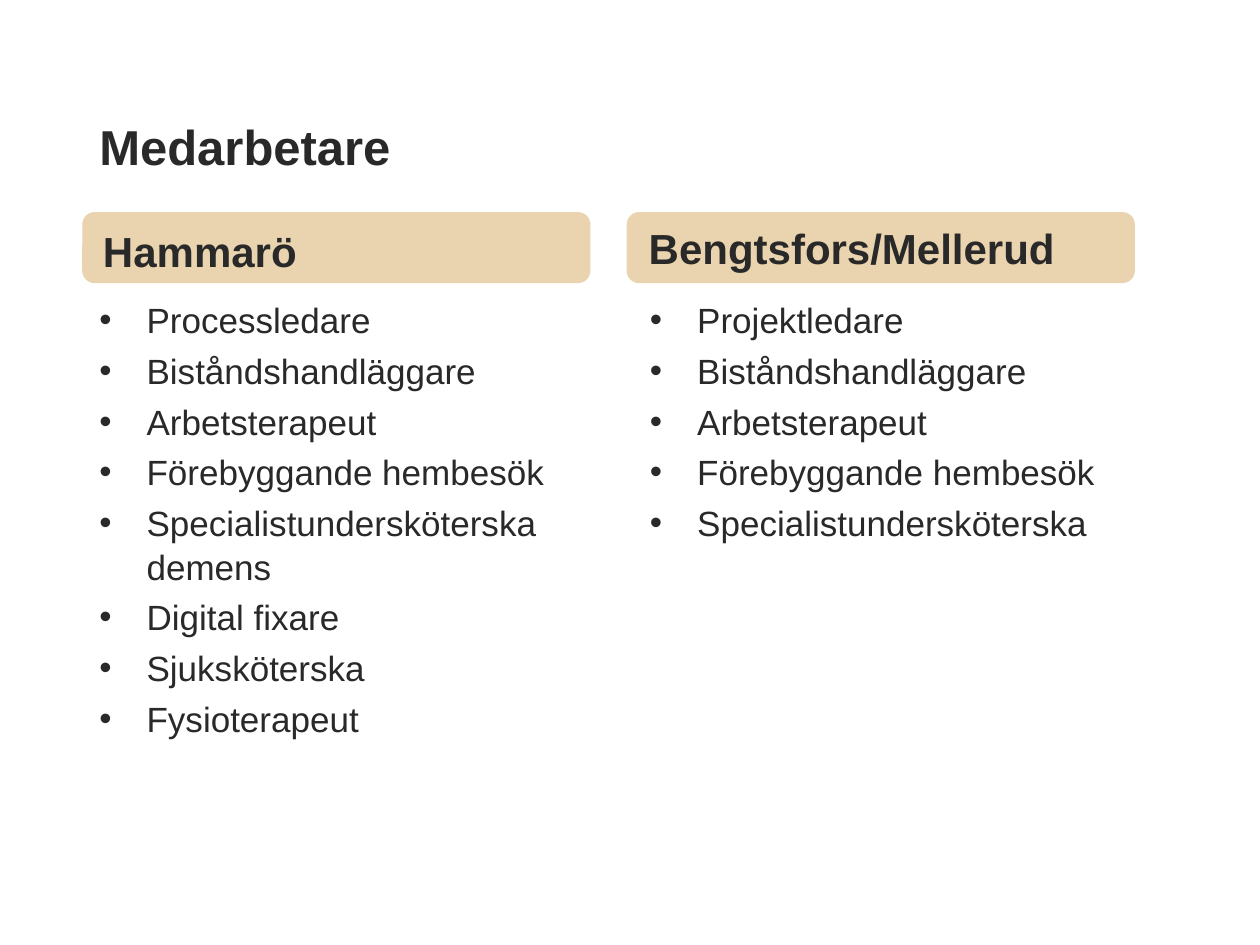
from dataclasses import dataclass

from lxml.etree import SubElement
from pptx import Presentation
from pptx.dml.color import RGBColor
from pptx.enum.shapes import MSO_SHAPE as Shp
from pptx.enum.text import MSO_ANCHOR as Anchor
from pptx.oxml.ns import qn
from pptx.slide import Slide
from pptx.util import Pt

COLORS = {"text": "292929", "band": "EAD4AF"}
FONT = "Arial"
INDENT = 27


@dataclass
class Column:
    heading: str
    roles: list[str]
    band_x: float
    heading_x: float
    heading_y: float
    list_x: float
    width: float


COLUMNS = [
    Column("Hammarö",
           ["Processledare", "Biståndshandläggare", "Arbetsterapeut",
            "Förebyggande hembesök", "Specialistundersköterska demens",
            "Digital fixare", "Sjuksköterska", "Fysioterapeut"],
           47.5, 51.8, 96.5, 49.7, 304.6),
    Column("Bengtsfors/Mellerud",
           ["Projektledare", "Biståndshandläggare", "Arbetsterapeut",
            "Förebyggande hembesök", "Specialistundersköterska"],
           358.6, 363.6, 95, 364.3, 306),
]


def add_text(s: Slide, text: str, *, x: float, y: float, w: float, h: float,
             size: float, bold: bool = False, bullets: bool = False,
             anchor: Anchor = Anchor.BOTTOM) -> None:
    tf = s.shapes.add_textbox(Pt(x), Pt(y), Pt(w), Pt(h)).text_frame
    tf.word_wrap = True
    tf.vertical_anchor = anchor
    tf.text = text
    for i, p in enumerate(tf.paragraphs):
        if bullets:
            p.line_spacing = 1.04
            p.space_before = Pt(4 if i else 0)
            pPr = p._p.get_or_add_pPr()
            pPr.set("marL", str(Pt(INDENT)))
            pPr.set("indent", str(-Pt(INDENT)))
            SubElement(pPr, qn("a:buFont"), typeface=FONT)
            SubElement(pPr, qn("a:buChar"), char="•")
        for r in p.runs:
            r.font.name = FONT
            r.font.size = Pt(size)
            r.font.bold = bold
            r.font.color.rgb = RGBColor.from_string(COLORS["text"])


def add_band(s: Slide, x: float) -> None:
    sp = s.shapes.add_shape(Shp.ROUNDED_RECTANGLE, Pt(x), Pt(121.7), Pt(289.4), Pt(39.6))
    sp.shadow.inherit = False
    sp.fill.solid()
    sp.fill.fore_color.rgb = RGBColor.from_string(COLORS["band"])
    sp.line.color.rgb = RGBColor.from_string(COLORS["band"])
    sp.line.width = Pt(1)


def add_column(s: Slide, col: Column) -> None:
    add_band(s, col.band_x)
    add_text(s, col.heading, x=col.heading_x, y=col.heading_y, w=col.width, h=64.8,
             size=24, bold=True)
    add_text(s, "\n".join(col.roles), x=col.list_x, y=166.3, w=col.width, h=290.2,
             size=20, bullets=True, anchor=Anchor.TOP)


def main() -> None:
    """Build the staff slide with one column per municipality."""
    prs = Presentation()
    prs.slide_width, prs.slide_height = Pt(720), Pt(540)
    s = prs.slides.add_slide(prs.slide_layouts[6])
    add_text(s, "Medarbetare", x=49.7, y=26.6, w=620.6, h=77, size=28, bold=True)
    for col in COLUMNS:
        add_column(s, col)
    prs.save("out.pptx")


if __name__ == "__main__":
    main()
